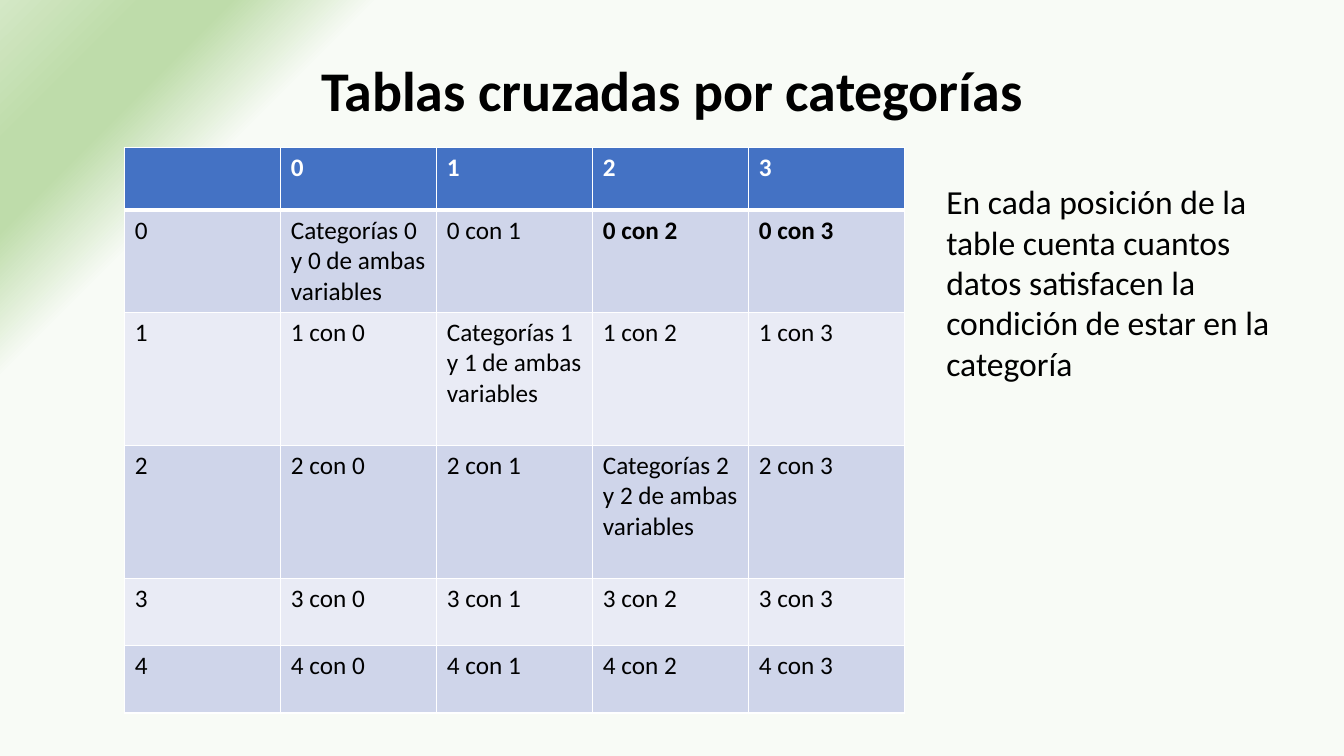
from lxml import etree
from pptx import Presentation
from pptx.dml.color import RGBColor
from pptx.enum.text import MSO_ANCHOR, PP_ALIGN
from pptx.oxml import parse_xml
from pptx.oxml.ns import nsdecls, qn
from pptx.util import Pt

CENTER, LEFT = PP_ALIGN.CENTER, PP_ALIGN.LEFT
MIDDLE, TOP = MSO_ANCHOR.MIDDLE, MSO_ANCHOR.TOP
FONT = "Calibri"
BLACK, WHITE = "000000", "FFFFFF"
HEADER_FILL, DARK_BAND, LIGHT_BAND = "4472C4", "CFD5EA", "E9EBF5"
BACKGROUND_STOPS = [(82, "F8FBF6"), (89, "BEDCAA"), (93, "BEDCAA"), (100, "D4E8C6")]
CATEGORIES = range(4)
ROW_HEIGHTS = [44.6, 73, 95, 95, 48.2, 48.2]
BOLD_CELLS = {"0 con 2", "0 con 3"}


def color(hex_code):
    """Turn a hex string into a colour."""
    return RGBColor.from_string(hex_code)


def write_text(frame, text, size=18, ink=BLACK, bold=False, align=LEFT, spacing=None):
    """Write one formatted paragraph into a text frame."""
    paragraph = frame.paragraphs[0]
    paragraph.alignment = align
    if spacing:
        paragraph.line_spacing = spacing
    run = paragraph.add_run()
    run.text = text
    run.font.name, run.font.size, run.font.bold = FONT, Pt(size), bold
    run.font.color.rgb = color(ink)


def add_text(slide, box, text, anchor=TOP, **style):
    """Place a wrapping text box in the given box."""
    frame = slide.shapes.add_textbox(*map(Pt, box)).text_frame
    frame.word_wrap = True
    frame.vertical_anchor = anchor
    write_text(frame, text, **style)


def paint_background(slide):
    """Fill the background with a gradient that starts in the corner."""
    slide.background.fill.gradient()
    old_gradient = slide.element.xpath(".//p:bgPr/a:gradFill")[0]
    stops = "".join(
        f'<a:gs pos="{place * 1000}"><a:srgbClr val="{ink}"/></a:gs>'
        for place, ink in BACKGROUND_STOPS)
    gradient = parse_xml(
        f'<a:gradFill {nsdecls("a")} rotWithShape="1"><a:gsLst>{stops}</a:gsLst>'
        '<a:path path="circle"><a:fillToRect l="100000" t="100000"/></a:path>'
        '<a:tileRect r="-100000" b="-100000"/></a:gradFill>')
    old_gradient.getparent().replace(old_gradient, gradient)


def set_borders(cell, top=1, bottom=1):
    """Draw white borders round a cell."""
    properties = cell._tc.get_or_add_tcPr()
    widths = {"a:lnL": 1, "a:lnR": 1, "a:lnT": top, "a:lnB": bottom}
    for index, (side, width) in enumerate(widths.items()):
        line = etree.Element(qn(side), w=str(Pt(width)))
        fill = etree.SubElement(line, qn("a:solidFill"))
        etree.SubElement(fill, qn("a:srgbClr"), val=WHITE)
        properties.insert(index, line)


def crossing_text(row, column):
    """Word the crossing of two categories."""
    if row == column and row < 3:
        return f"Categorías {row} y {column} de ambas variables"
    return f"{row} con {column}"


def add_cross_table(slide, box):
    """Build the table that crosses the categories."""
    entries = [["", *map(str, CATEGORIES)]]
    for row in range(len(ROW_HEIGHTS) - 1):
        entries.append([str(row), *(crossing_text(row, column) for column in CATEGORIES)])
    table = slide.shapes.add_table(len(entries), len(entries[0]), *map(Pt, box)).table
    for row, (height, texts) in enumerate(zip(ROW_HEIGHTS, entries)):
        table.rows[row].height = Pt(height)
        header = row == 0
        band = HEADER_FILL if header else (DARK_BAND if row % 2 else LIGHT_BAND)
        for column, text in enumerate(texts):
            cell = table.cell(row, column)
            cell.fill.solid()
            cell.fill.fore_color.rgb = color(band)
            set_borders(cell, top=3 if row == 1 else 1, bottom=3 if header else 1)
            if text:
                write_text(cell.text_frame, text, ink=WHITE if header else BLACK,
                           bold=header or text in BOLD_CELLS)


def build_slide(presentation):
    """Build the slide on cross tables."""
    slide = presentation.slides.add_slide(presentation.slide_layouts[6])
    paint_background(slide)
    add_text(slide, (66, 28.8, 828, 76.3), "Tablas cruzadas por categorías",
             anchor=MIDDLE, size=40, bold=True, align=CENTER, spacing=0.9)
    add_cross_table(slide, (89.2, 105.4, 557.2, sum(ROW_HEIGHTS)))
    add_text(slide, (668.9, 126, 257, 211),
             "En cada posición de la table cuenta cuantos datos satisfacen "
             "la condición de estar en la categoría", size=24)


def main():
    """Save the presentation."""
    presentation = Presentation()
    presentation.slide_width, presentation.slide_height = Pt(960), Pt(540)
    build_slide(presentation)
    presentation.save("out.pptx")


if __name__ == "__main__":
    main()
